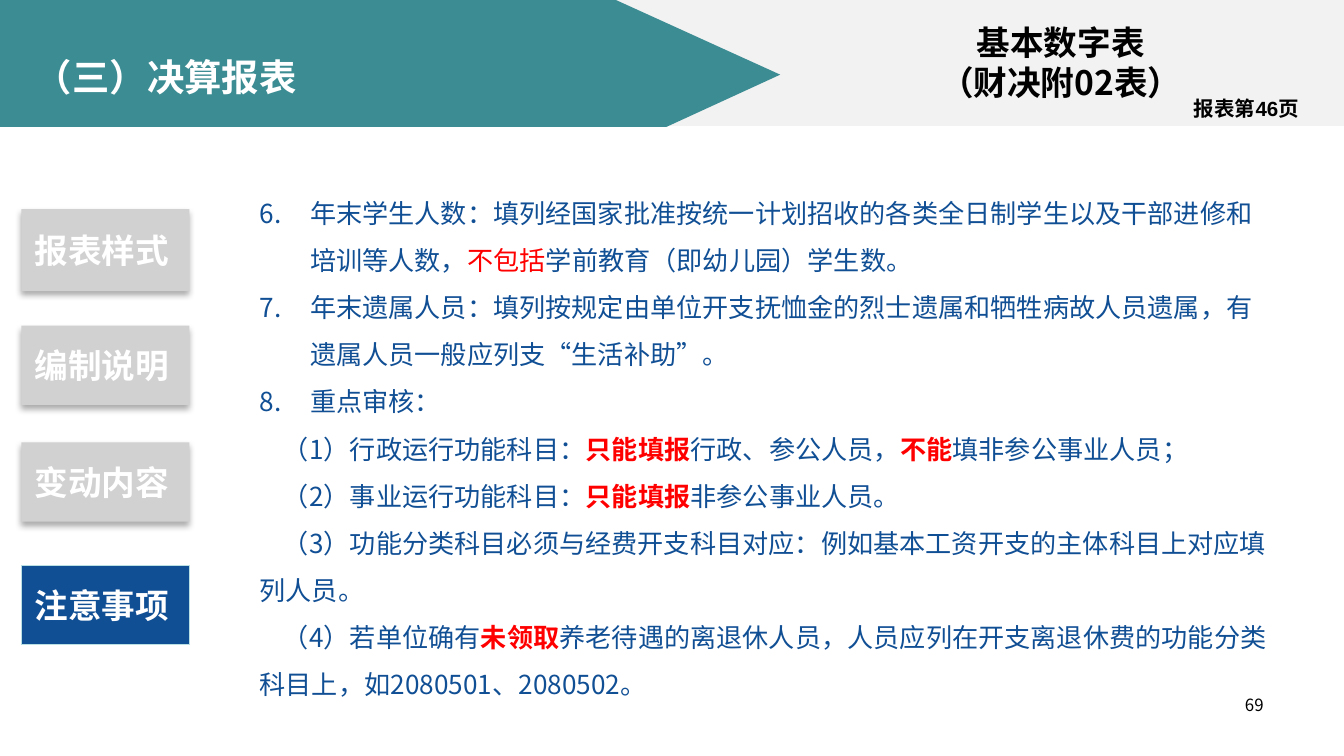
from lxml.etree import SubElement
from pptx import Presentation
from pptx.dml.color import RGBColor
from pptx.enum.shapes import MSO_SHAPE
from pptx.enum.text import MSO_ANCHOR, PP_ALIGN
from pptx.oxml.ns import qn
from pptx.util import Pt

FONT = "Noto Sans CJK SC"
COLORS = {"teal": "3C8C93", "band": "F2F2F2", "blue": "114F95", "red": "FF0000",
          "gray": "D1D1D1", "edge": "BBE0E3", "white": "FFFFFF", "black": "000000"}

# Text between asterisks is red, between underscores red and bold.
NUMBERED = [
    "年末学生人数：填列经国家批准按统一计划招收的各类全日制学生以及干部进修和培训等人数，"
    "*不包括*学前教育（即幼儿园）学生数。",
    "年末遗属人员：填列按规定由单位开支抚恤金的烈士遗属和牺牲病故人员遗属，"
    "有遗属人员一般应列支“生活补助”。",
    "重点审核：",
]
CHECKS = [
    "（1）行政运行功能科目：_只能填报_行政、参公人员，_不能_填非参公事业人员；",
    "（2）事业运行功能科目：_只能填报_非参公事业人员。",
    "（3）功能分类科目必须与经费开支科目对应：例如基本工资开支的主体科目上对应填列人员。",
    "（4）若单位确有_未领取_养老待遇的离退休人员，人员应列在开支离退休费的功能分类科目上，"
    "如2080501、2080502。",
]
TABS = [("报表样式", 112, 44), ("编制说明", 174.5, 42.5),
        ("变动内容", 237, 42.5), ("注意事项", 303, 42.5)]
ACTIVE_TAB = "注意事项"


def rgb(name):
    return RGBColor.from_string(COLORS[name])


def add_run(p, text, size=14, color="black", bold=False, font=FONT):
    r = p.add_run()
    r.text = text
    r.font.size, r.font.bold, r.font.name = Pt(size), bold, font
    r.font.color.rgb = rgb(color)
    SubElement(r._r.get_or_add_rPr(), qn("a:ea"), typeface=FONT)


def set_text(tf, lines, align=PP_ALIGN.LEFT, anchor=MSO_ANCHOR.TOP,
             wrap=True, spacing=None, **run_format):
    tf.word_wrap, tf.vertical_anchor = wrap, anchor
    for i, line in enumerate(lines):
        p = tf.add_paragraph() if i else tf.paragraphs[0]
        p.alignment = align
        if spacing:
            p.line_spacing = Pt(spacing)
        add_run(p, line, **run_format)


def add_textbox(s, box, lines, **text_format):
    sp = s.shapes.add_textbox(*map(Pt, box))
    set_text(sp.text_frame, lines, **text_format)


def add_rect(s, box, fill, line=None):
    sp = s.shapes.add_shape(MSO_SHAPE.RECTANGLE, *map(Pt, box))
    sp.shadow.inherit = False
    sp.fill.solid()
    sp.fill.fore_color.rgb = rgb(fill)
    if line:
        sp.line.color.rgb = rgb(line)
        sp.line.width = Pt(0.5)
    else:
        sp.line.fill.background()
    return sp


def add_soft_shadow(sp):
    effects = sp._element.spPr.find(qn("a:effectLst"))
    shadow = SubElement(effects, qn("a:outerShdw"), blurRad=str(Pt(3.5)),
                        dist=str(Pt(2.2)), dir="5400000", rotWithShape="0")
    color = SubElement(shadow, qn("a:srgbClr"), val=COLORS["black"])
    SubElement(color, qn("a:alpha"), val="32000")


def add_banner(s):
    add_rect(s, (138, 0, 582, 67.5), "band")
    builder = s.shapes.build_freeform(0, 0, scale=Pt(1))
    builder.add_line_segments([(330.5, 0), (417.5, 39.5), (357, 67.5), (0, 67.5)])
    arrow = builder.convert_to_shape()
    arrow.shadow.inherit = False
    arrow.fill.solid()
    arrow.fill.fore_color.rgb = rgb("teal")
    arrow.line.fill.background()


def add_title(s, text):
    title = s.shapes.title
    title.left, title.top, title.width, title.height = map(Pt, (11.5, 24.5, 339, 32.5))
    set_text(title.text_frame, [text], anchor=MSO_ANCHOR.MIDDLE,
             size=20, color="white", bold=True)
    s.shapes._spTree.append(title._element)  # bring in front of the banner


def add_tab(s, label, top, height):
    active = label == ACTIVE_TAB
    sp = add_rect(s, (11.5, top, 90, height), "blue" if active else "gray",
                  "edge" if active else None)
    if not active:
        add_soft_shadow(sp)
    set_text(sp.text_frame, [label], anchor=MSO_ANCHOR.MIDDLE,
             size=18, color="white", bold=True)


def add_marked_runs(p, text):
    """Split text at its marks and add plain, red and bold red runs."""
    for i, part in enumerate(text.replace("_", "*_").split("*")):
        bold = part.startswith("_") and i % 2 == 1
        if part.strip("_"):
            add_run(p, part.strip("_"), color="red" if i % 2 else "blue", bold=bold)


def add_notes_list(s):
    tf = s.shapes.add_textbox(*map(Pt, (132, 94, 556, 302))).text_frame
    tf.word_wrap = True
    for i, text in enumerate(NUMBERED + CHECKS):
        p = tf.add_paragraph() if i else tf.paragraphs[0]
        p.line_spacing = Pt(25.2)
        pPr = p._p.get_or_add_pPr()
        if i < len(NUMBERED):
            pPr.set("marL", str(Pt(27)))
            pPr.set("indent", str(Pt(-27)))
            SubElement(pPr, qn("a:buFont"), typeface=FONT)
            SubElement(pPr, qn("a:buAutoNum"), type="arabicPeriod", startAt="6")
        else:
            pPr.set("indent", str(Pt(12.5)))
        add_marked_runs(p, text)


def main():
    prs = Presentation()
    prs.slide_width, prs.slide_height = Pt(720), Pt(405)
    s = prs.slides.add_slide(prs.slide_layouts[5])
    add_banner(s)
    add_title(s, "（三）决算报表")
    add_textbox(s, (421, 8, 294.5, 51), ["基本数字表", "（财决附02表）"],
                align=PP_ALIGN.CENTER, anchor=MSO_ANCHOR.MIDDLE, spacing=21.4,
                size=18, bold=True)
    add_textbox(s, (516, 368.5, 168, 28), ["69"], align=PP_ALIGN.RIGHT, size=9)
    add_notes_list(s)
    for tab in TABS:
        add_tab(s, *tab)
    add_textbox(s, (625, 48, 85.5, 21), ["报表第46页"], align=PP_ALIGN.CENTER,
                wrap=False, size=11, bold=True, font="Arial")
    prs.save("out.pptx")


if __name__ == "__main__":
    main()
